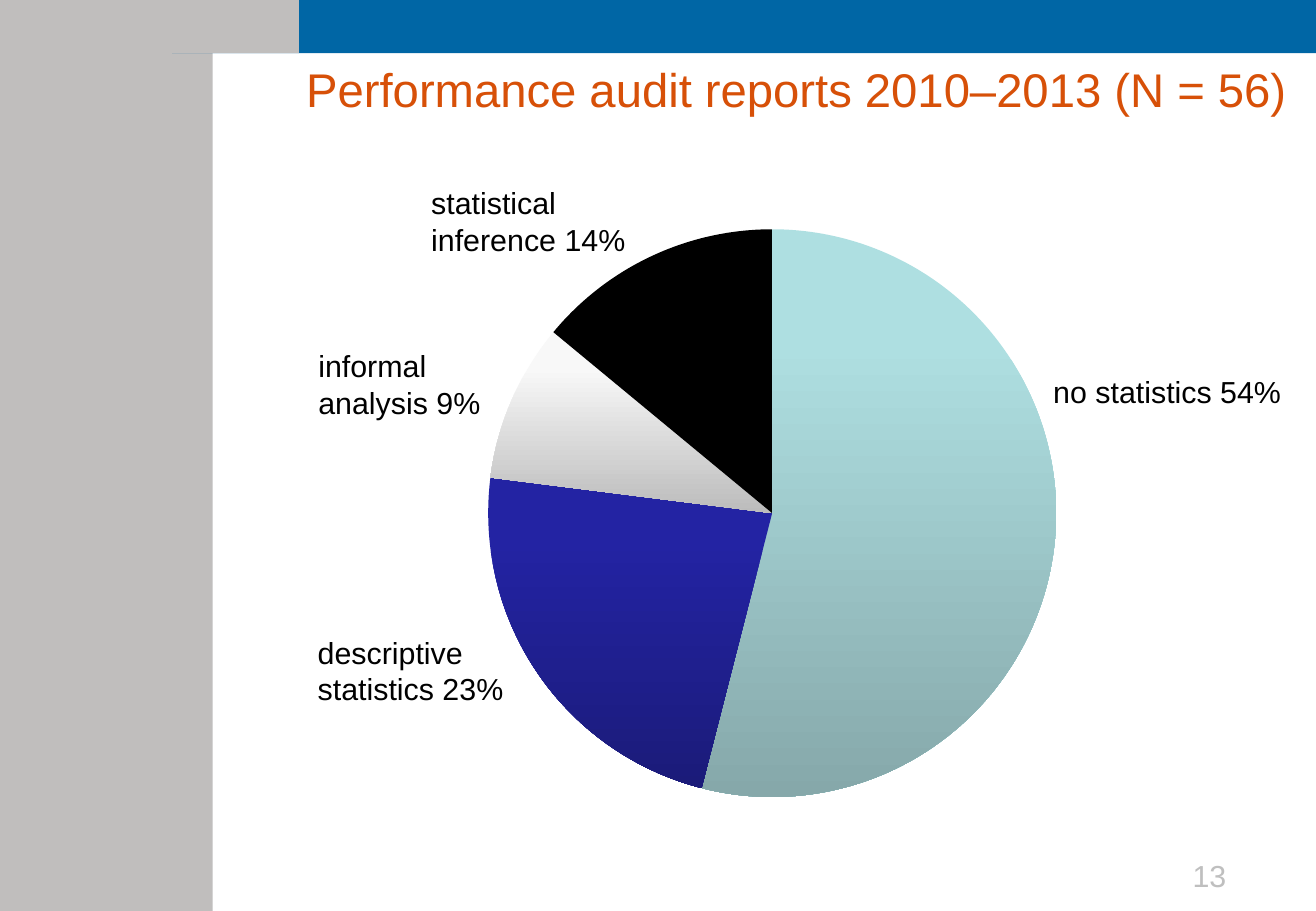
from dataclasses import dataclass

from pptx import Presentation
from pptx.chart.data import CategoryChartData
from pptx.dml.color import RGBColor
from pptx.enum.chart import XL_CHART_TYPE
from pptx.enum.shapes import MSO_SHAPE
from pptx.enum.text import MSO_ANCHOR, MSO_AUTO_SIZE, PP_ALIGN
from pptx.oxml import parse_xml
from pptx.oxml.ns import nsdecls, qn
from pptx.util import Pt

# Content
TITLE = "Performance audit reports 2010–2013 (N = 56)"
PAGE_NUMBER = "13"
SHARES = {"1": 54, "2": 23, "3": 9, "4": 14}
LABELS = [  # lines, (left, top, width, height)
    (["no statistics 54%"], (617, 217.5, 151.2, 29)),
    (["descriptive", "statistics 23%"], (181.2, 372.2, 125.3, 51)),
    (["informal", "analysis 9%"], (181.5, 202.3, 111.6, 51)),
    (["statistical", "inference 14%"], (248.4, 105.8, 130.3, 51)),
]


@dataclass(frozen=True)
class Theme:
    font: str = "Arial"
    title_size: int = 28
    text_size: int = 18
    title: str = "D75008"
    text: str = "000000"
    number: str = "BFBFBF"
    grey: str = "C0BEBD"
    blue: str = "0066A5"
    slices: tuple = (  # top and bottom shade of each slice
        ("AEDFE1", "86A8AA"),
        ("2323A3", "1B1B79"),
        ("F8F8F8", "BCBCBC"),
        ("000000", "000000"),
    )


THEME = Theme()
PAGE_WIDTH, PAGE_HEIGHT = 779.76, 540
BAND_HEIGHT = 31.5
BANDS = [
    ((0, 0, 126, PAGE_HEIGHT), THEME.grey),
    ((102, 0, PAGE_WIDTH - 102, BAND_HEIGHT), THEME.blue),
    ((90, 0, 87.12, BAND_HEIGHT), THEME.grey),
]
TITLE_BOX = (174.24, BAND_HEIGHT, PAGE_WIDTH - 174.24, 42.5)
CHART_BOX = (174.24, 126, 566.64, 356.4)
PIE_DIAMETER = 336.6
NUMBER_BOX = (570.24, 504, 163.44, 30.24)


def points(box):
    return [Pt(length) for length in box]


def style(font, size, colour):
    font.name = THEME.font
    font.size = Pt(size)
    font.color.rgb = RGBColor.from_string(colour)


def add_text(page, box, lines, colour=THEME.text, align=PP_ALIGN.LEFT):
    shape = page.shapes.add_textbox(*points(box))
    frame = shape.text_frame
    frame.text = "\n".join(lines)
    for para in frame.paragraphs:
        para.alignment = align
        style(para.font, THEME.text_size, colour)
    return frame


def add_pie(page):
    data = CategoryChartData()
    data.categories = list(SHARES)
    data.add_series("Series 1", list(SHARES.values()))
    chart = page.shapes.add_chart(XL_CHART_TYPE.PIE, *points(CHART_BOX), data).chart
    chart.has_legend = False
    chart.has_title = False
    style(chart.font, THEME.text_size, THEME.text)
    plot = chart.plots[0]
    plot.vary_by_categories = True

    # Shaded slices
    for index, shades in enumerate(THEME.slices):
        slice_format = plot.series[0].points[index].format
        slice_format.line.fill.background()
        fill = slice_format.fill
        fill.gradient()
        fill.gradient_angle = 270
        for stop, shade, position in zip(fill.gradient_stops, shades, (0.2, 1)):
            stop.color.rgb = RGBColor.from_string(shade)
            stop.position = position

    # Pie centred in the chart area
    width, height = (PIE_DIAMETER / side for side in CHART_BOX[2:])
    values = {"x": (1 - width) / 2, "y": (1 - height) / 2, "w": width, "h": height}
    settings = "".join(f'<c:{key} val="{value:.4f}"/>' for key, value in values.items())
    layout = parse_xml(
        f'<c:layout {nsdecls("c")}><c:manualLayout><c:layoutTarget val="inner"/>'
        f'<c:xMode val="edge"/><c:yMode val="edge"/>{settings}</c:manualLayout></c:layout>'
    )
    plot_area = chart.element.find(f'.//{qn("c:plotArea")}')
    for default in plot_area.findall(qn("c:layout")):
        plot_area.remove(default)
    plot_area.insert(0, layout)


def main():
    deck = Presentation()
    deck.slide_width, deck.slide_height = Pt(PAGE_WIDTH), Pt(PAGE_HEIGHT)
    page = deck.slides.add_slide(deck.slide_layouts[5])

    # Side and top bands
    for box, colour in BANDS:
        band = page.shapes.add_shape(MSO_SHAPE.RECTANGLE, *points(box))
        band.shadow.inherit = False
        band.fill.solid()
        band.fill.fore_color.rgb = RGBColor.from_string(colour)
        band.line.fill.background()

    # Title
    title = page.shapes.title
    title.left, title.top, title.width, title.height = points(TITLE_BOX)
    frame = title.text_frame
    frame.text = TITLE
    frame.auto_size = MSO_AUTO_SIZE.NONE
    frame.vertical_anchor = MSO_ANCHOR.MIDDLE
    para = frame.paragraphs[0]
    para.alignment = PP_ALIGN.LEFT
    style(para.font, THEME.title_size, THEME.title)

    # Pie, page number and slice labels
    add_pie(page)
    number = add_text(page, NUMBER_BOX, [PAGE_NUMBER], THEME.number, PP_ALIGN.RIGHT)
    number.word_wrap = True
    number.vertical_anchor = MSO_ANCHOR.MIDDLE
    for lines, box in LABELS:
        label = add_text(page, box, lines)
        label.word_wrap = False
        label.auto_size = MSO_AUTO_SIZE.SHAPE_TO_FIT_TEXT

    deck.save("out.pptx")


if __name__ == "__main__":
    main()
